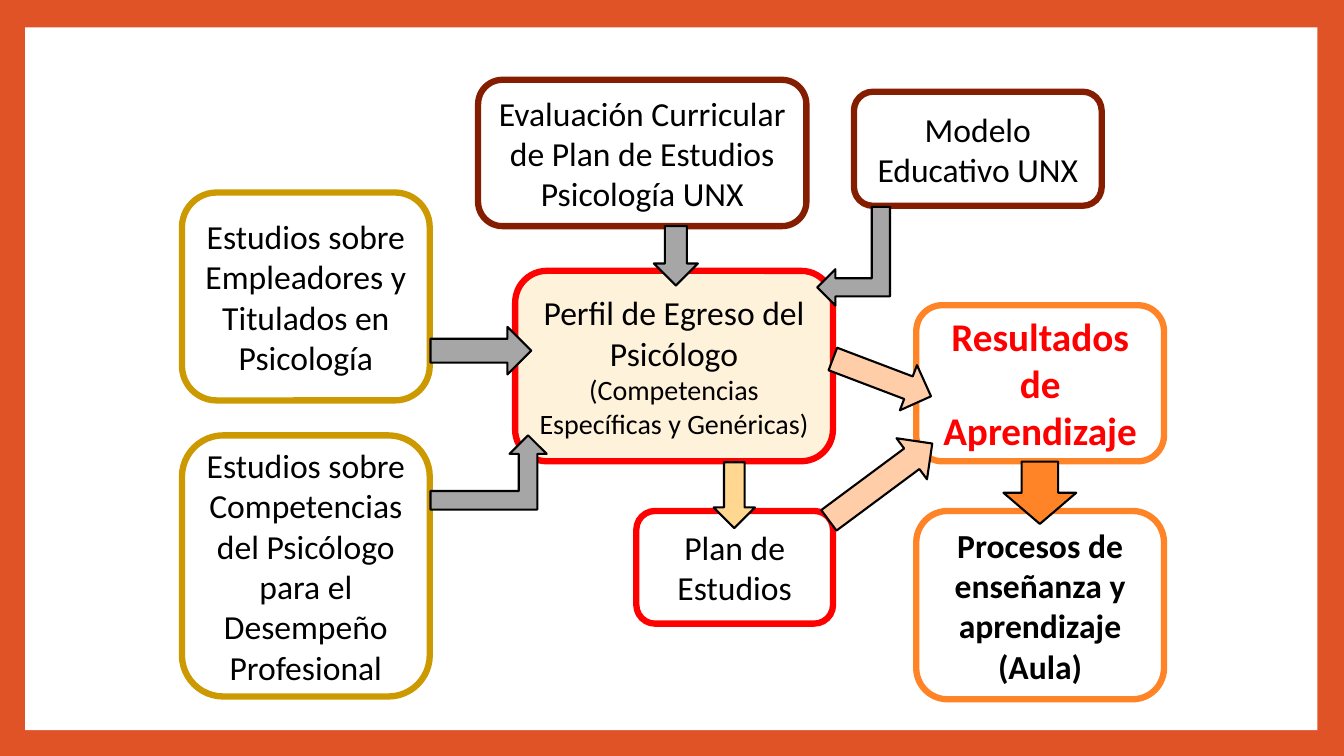
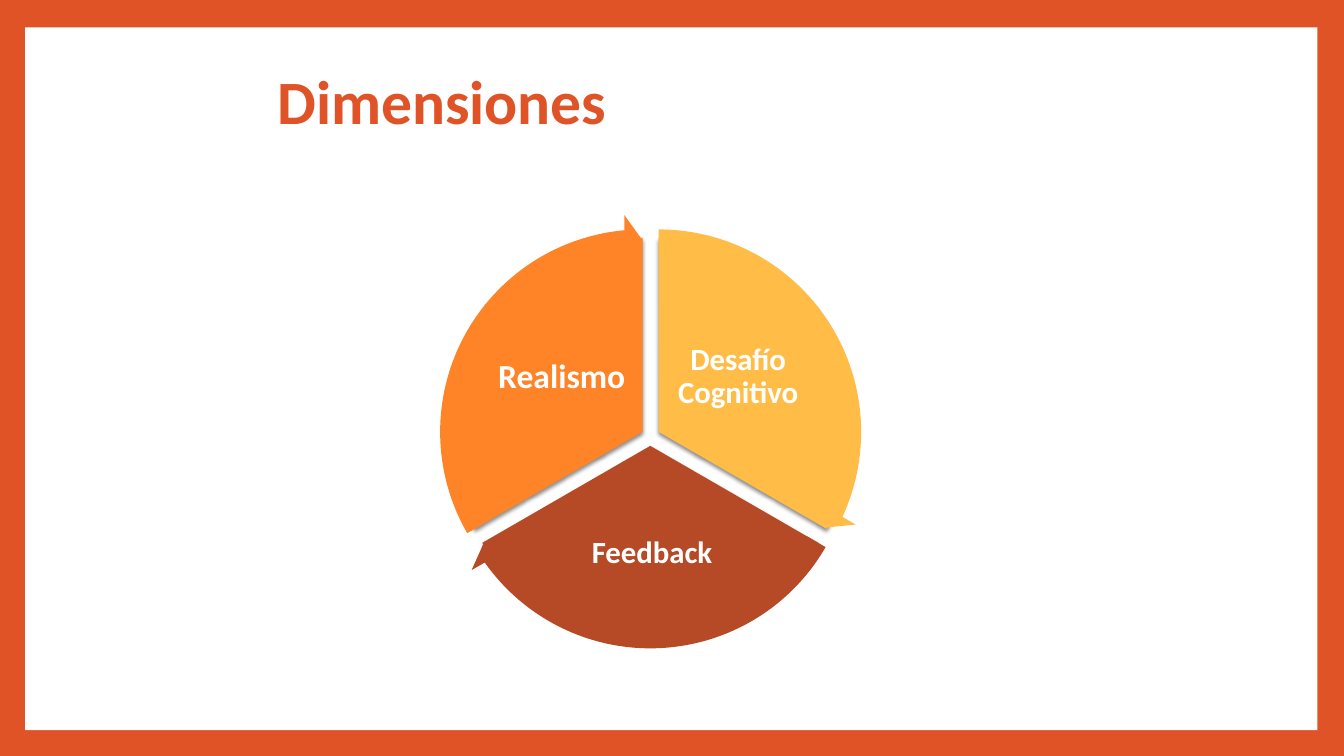
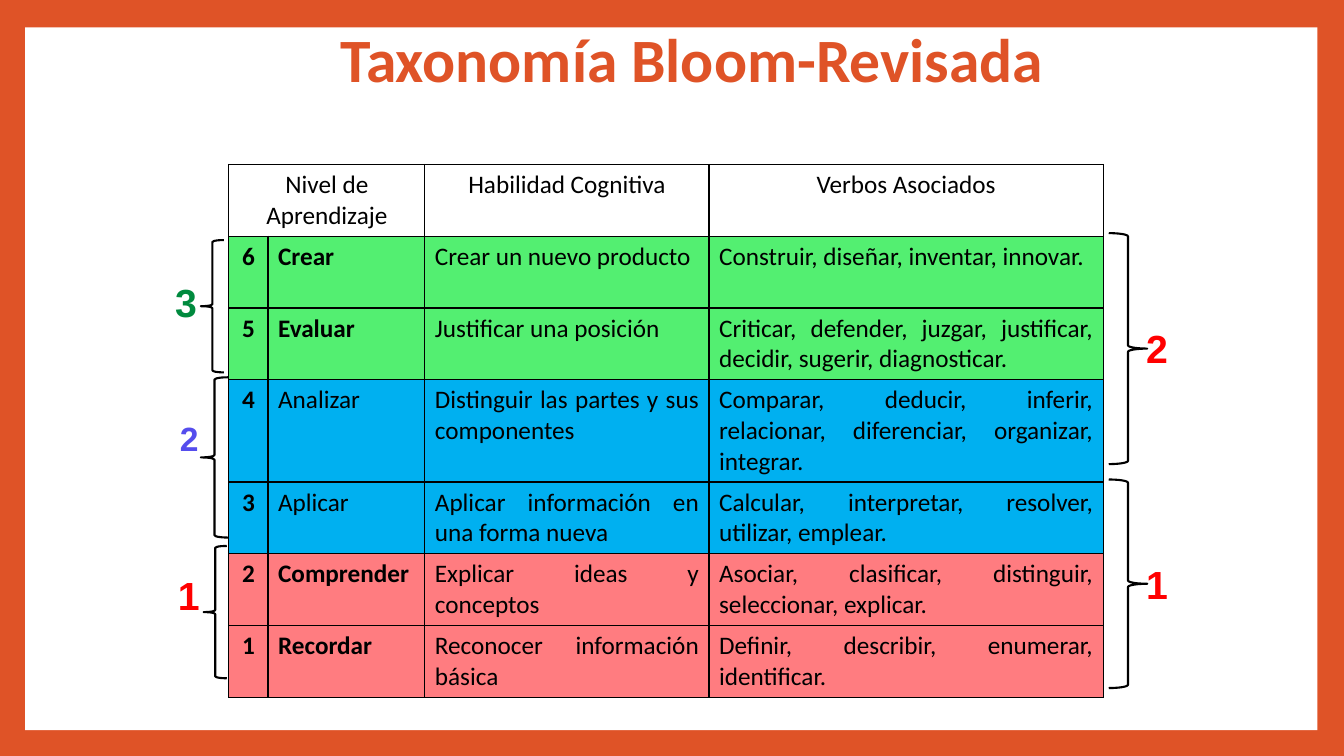
from dataclasses import dataclass

from lxml import etree
from pptx import Presentation
from pptx.dml.color import RGBColor
from pptx.enum.shapes import MSO_SHAPE
from pptx.enum.text import MSO_ANCHOR, PP_ALIGN
from pptx.oxml.ns import qn
from pptx.util import Pt

LEFT, CENTER, JUSTIFY = PP_ALIGN.LEFT, PP_ALIGN.CENTER, PP_ALIGN.JUSTIFY
TOP, MIDDLE = MSO_ANCHOR.TOP, MSO_ANCHOR.MIDDLE
RECTANGLE, ROUNDED = MSO_SHAPE.RECTANGLE, MSO_SHAPE.ROUNDED_RECTANGLE
RIGHT_ARROW, BENT_ARROW = MSO_SHAPE.RIGHT_ARROW, MSO_SHAPE.BENT_UP_ARROW
LEFT_BRACE, RIGHT_BRACE = MSO_SHAPE.LEFT_BRACE, MSO_SHAPE.RIGHT_BRACE
PIE, CIRCULAR_ARROW = MSO_SHAPE.PIE, MSO_SHAPE.CIRCULAR_ARROW


@dataclass(frozen=True)
class Theme:
    # Colours
    accent: str = "DF5327"
    white: str = "FFFFFF"
    black: str = "000000"
    red: str = "FF0000"
    gold: str = "CC9900"
    orange: str = "FF8427"
    maroon: str = "851D00"
    cream: str = "FFF2DA"
    gray: str = "A6A6A6"
    sand: str = "FFD791"
    peach: str = "FFCEA9"
    yellow: str = "FFBD47"
    brick: str = "B64926"
    green_row: str = "53EF71"
    blue_row: str = "00B0F0"
    pink_row: str = "FF7C80"
    green_label: str = "008A3E"
    violet_label: str = "554DED"
    # Fonts and sizes
    font: str = "Calibri"
    label_font: str = "Arial"
    title_size: int = 44
    large_size: int = 28
    box_size: int = 24
    sector_size: int = 22
    note_size: int = 20
    table_size: int = 18
    box_line: float = 4.5
    thin_line: float = 1.5
    cell_line: float = 1


THEME = Theme()


def apply_format(target, **values):
    for name, value in values.items():
        setattr(target, name, value)


class Deck:
    """Holds the style and the current slide."""

    def __init__(self, theme):
        self.theme = theme
        self.presentation = Presentation()
        apply_format(self.presentation, slide_width=Pt(960), slide_height=Pt(540))
        self.slide = None

    def new_slide(self):
        self.slide = self.presentation.slides.add_slide(
            self.presentation.slide_layouts[6])
        background = self.slide.background.fill
        background.solid()
        background.fore_color.rgb = RGBColor.from_string(self.theme.accent)
        self.shape(RECTANGLE, (18, 19.5, 923, 502), self.theme.white)

    def fill_text(self, frame, paragraphs, color=None, font=None, bold=False,
                  align=CENTER, anchor=MIDDLE, spacing=1.0, margins=None):
        """Fill a text frame with (text, size) paragraphs."""
        apply_format(frame, word_wrap=True, vertical_anchor=anchor)
        if margins is not None:
            for side in ("left", "right", "top", "bottom"):
                setattr(frame, f"margin_{side}", Pt(margins))
        for index, (text, size) in enumerate(paragraphs):
            paragraph = frame.add_paragraph() if index else frame.paragraphs[0]
            apply_format(paragraph, alignment=align, line_spacing=spacing)
            run = paragraph.add_run()
            run.text = text
            apply_format(run.font, name=font or self.theme.font,
                         size=Pt(size), bold=bold)
            run.font.color.rgb = RGBColor.from_string(color or self.theme.black)

    def text(self, place, text, size, **style):
        box = self.slide.shapes.add_textbox(*map(Pt, place))
        self.fill_text(box.text_frame, [(text, size)], **style)

    def title(self, place, text, align=LEFT):
        self.text(place, text, self.theme.title_size, color=self.theme.accent,
                  bold=True, align=align, spacing=0.9)

    def shape(self, kind, place, fill=None, line=None, width=0, rotation=0,
              adjustments=()):
        shape = self.slide.shapes.add_shape(kind, *map(Pt, place))
        shape.shadow.inherit = False
        shape.rotation = rotation
        for index, value in enumerate(adjustments):
            shape.adjustments[index] = value
        if fill:
            shape.fill.solid()
            shape.fill.fore_color.rgb = RGBColor.from_string(fill)
        else:
            shape.fill.background()
        if line:
            shape.line.color.rgb = RGBColor.from_string(line)
            shape.line.width = Pt(width)
        else:
            shape.line.fill.background()
        return shape

    def box(self, place, line, paragraphs, fill=None, **style):
        shape = self.shape(ROUNDED, place, fill or self.theme.white, line,
                           self.theme.box_line)
        self.fill_text(shape.text_frame, paragraphs, **style)

    def arrow(self, kind, place, fill, rotation=0, flip=False):
        shape = self.shape(kind, place, fill, self.theme.black,
                           self.theme.thin_line, rotation)
        if flip:
            shape._element.spPr.find(qn("a:xfrm")).set("flipV", "1")

    def brace(self, kind, place):
        self.shape(kind, place, None, self.theme.black, self.theme.thin_line)

    def sector(self, place, fill, start, end):
        shape = self.shape(PIE, place, fill, adjustments=(start, end))
        effects = shape._element.spPr.find(qn("a:effectLst"))
        shadow = etree.SubElement(effects, qn("a:outerShdw"), blurRad=str(Pt(3)),
                                  dist=str(Pt(2)), dir="5400000", rotWithShape="0")
        color = etree.SubElement(shadow, qn("a:srgbClr"), val=self.theme.black)
        etree.SubElement(color, qn("a:alpha"), val="45000")

    def cell(self, cell, text, fill, align, bold=False):
        properties = cell._tc.get_or_add_tcPr()
        for side in ("lnL", "lnR", "lnT", "lnB"):
            border = etree.SubElement(properties, qn(f"a:{side}"),
                                      w=str(Pt(self.theme.cell_line)))
            solid = etree.SubElement(border, qn("a:solidFill"))
            etree.SubElement(solid, qn("a:srgbClr"), val=self.theme.black)
        cell.fill.solid()
        cell.fill.fore_color.rgb = RGBColor.from_string(fill)
        if text:
            self.fill_text(cell.text_frame, [(text, self.theme.table_size)],
                           align=align, bold=bold, anchor=TOP)

    def table(self, left, top, widths, heights, header, rows):
        """Rows are (fill, bold level, texts); the header joins two columns."""
        table = self.slide.shapes.add_table(
            len(heights), len(widths), Pt(left), Pt(top),
            Pt(sum(widths)), Pt(sum(heights))).table
        for column, width in zip(table.columns, widths):
            column.width = Pt(width)
        for row, height in zip(table.rows, heights):
            row.height = Pt(height)
        for column, text in enumerate(header):
            self.cell(table.cell(0, column), text, self.theme.white, CENTER)
        table.cell(0, 0).merge(table.cell(0, 1))
        alignments = (CENTER, LEFT, JUSTIFY, JUSTIFY)
        for index, (fill, bold_level, texts) in enumerate(rows, 1):
            bolds = (True, bold_level, False, False)
            for column, text in enumerate(texts):
                self.cell(table.cell(index, column), text, fill,
                          alignments[column], bolds[column])


def build_profile(deck):
    theme = deck.theme
    size = theme.box_size
    deck.new_slide()
    # Sources, profile and plan
    plain_boxes = [
        ((130, 137.5, 177, 148.5), theme.gold,
         "Estudios sobre Empleadores y Titulados en Psicología"),
        ((130, 311, 177, 186.5), theme.gold,
         "Estudios sobre Competencias del Psicólogo para el Desempeño Profesional"),
        ((341.5, 57, 234.5, 104.5), theme.maroon,
         "Evaluación Curricular de Plan de Estudios Psicología UNX"),
        ((610, 65.5, 177, 81.5), theme.maroon, "Modelo Educativo UNX"),
        ((454.5, 365, 140.5, 80.5), theme.red, "Plan de Estudios"),
    ]
    for place, line, text in plain_boxes:
        deck.box(place, line, [(text, size)])
    deck.box((368, 193.5, 227, 136), theme.red,
             [("Perfil de Egreso del Psicólogo", size),
              ("(Competencias Específicas y Genéricas)", theme.note_size)],
             fill=theme.cream)
    # Results and classroom
    deck.box((654.5, 365, 177, 134.5), theme.orange,
             [("Procesos de enseñanza y aprendizaje", size), ("(Aula)", size)],
             bold=True)
    deck.box((654.5, 218, 177, 111.5), theme.orange,
             [("Resultados de Aprendizaje", theme.large_size)],
             color=theme.red, bold=True)
    # Arrows
    deck.arrow(BENT_ARROW, (307.5, 311, 83, 53), theme.gray)
    deck.arrow(BENT_ARROW, (574.5, 157, 70.5, 52), theme.gray, 90, flip=True)
    straight_arrows = [
        ((307.5, 233.5, 72, 34), theme.gray, 0),
        ((461.5, 167, 42.5, 31.5), theme.gray, 90),
        ((501, 339, 47, 29.5), theme.sand, 90),
        ((720.5, 326, 44.5, 52), theme.orange, 90),
        ((592.5, 252.5, 75, 34.5), theme.peach, 20.8),
        ((583, 326, 92, 36.5), theme.peach, 323.4),
    ]
    for place, fill, rotation in straight_arrows:
        deck.arrow(RIGHT_ARROW, place, fill, rotation)


def build_dimensions(deck):
    theme = deck.theme
    deck.new_slide()
    deck.title((191, 17.5, 606, 114.5), "Dimensiones")
    # Cycle: angles in adjustment units, where a full turn is 216
    turn, third, head = 216, 72, 3.28
    diameter, margin = 277, 17
    sectors = [
        (332, 170, theme.yellow, 162, "Desafío Cognitivo", theme.sector_size,
         (478, 228, 98.5, 83)),
        (326, 180, theme.brick, 18, "Feedback", theme.sector_size,
         (391.5, 359.5, 148.5, 72.5)),
        (320.5, 170, theme.orange, 90, "Realismo", theme.box_size,
         (352, 228, 98.5, 83)),
    ]
    for left, top, fill, start, text, size, place in sectors:
        deck.sector((left, top, diameter, diameter), fill, start,
                    (start + third) % turn)
        deck.text(place, text, size, color=theme.white, bold=True, spacing=0.9,
                  margins=2)
    for left, top, fill, start, *_ in sectors:
        end = (start + third) % turn
        outer = diameter + 2 * margin
        deck.shape(CIRCULAR_ARROW, (left - margin, top - margin, outer, outer),
                   fill, adjustments=(0.05, head, end - head, start, 0.06))


def build_taxonomy(deck):
    theme = deck.theme
    deck.new_slide()
    deck.title((196.5, 0, 596, 90), "Taxonomía Bloom-Revisada", CENTER)
    # Levels table
    green, blue, pink = theme.green_row, theme.blue_row, theme.pink_row
    two_lines, three_lines = 51.3, 73
    rows = [
        (green, True, ("6", "Crear", "Crear un nuevo producto",
                       "Construir, diseñar, inventar, innovar.")),
        (green, True, ("5", "Evaluar", "Justificar una posición",
                       "Criticar, defender, juzgar, justificar, decidir, "
                       "sugerir, diagnosticar.")),
        (blue, False, ("4", "Analizar", "Distinguir las partes y sus componentes",
                       "Comparar, deducir, inferir, relacionar, diferenciar, "
                       "organizar, integrar.")),
        (blue, False, ("3", "Aplicar", "Aplicar información en una forma nueva",
                       "Calcular, interpretar, resolver, utilizar, emplear.")),
        (pink, True, ("2", "Comprender", "Explicar ideas y conceptos",
                      "Asociar, clasificar, distinguir, seleccionar, explicar.")),
        (pink, True, ("1", "Recordar", "Reconocer información básica",
                      "Definir, describir, enumerar, identificar.")),
    ]
    deck.table(163.5, 117.5, (28, 112, 203, 281.5),
               [two_lines] * 3 + [three_lines] + [two_lines] * 3,
               ("Nivel de Aprendizaje", "", "Habilidad Cognitiva",
                "Verbos Asociados"), rows)
    # Group braces and their numbers
    braces = [
        (LEFT_BRACE, (143.5, 171.5, 16.5, 94.5)),
        (LEFT_BRACE, (143.5, 269.5, 19.5, 114.5)),
        (LEFT_BRACE, (145.5, 390, 16.5, 94.5)),
        (RIGHT_BRACE, (792, 166.5, 27.5, 165)),
        (RIGHT_BRACE, (792, 342.5, 27.5, 149)),
    ]
    for kind, place in braces:
        deck.brace(kind, place)
    numbers = [
        ((118, 195, 32, 41), "3", theme.large_size, theme.green_label),
        ((121.5, 295, 30, 36), "2", theme.box_size, theme.violet_label),
        ((120, 404.5, 32, 41), "1", theme.large_size, theme.red),
        ((811.5, 396.5, 32, 41), "1", theme.large_size, theme.red),
        ((811.5, 228, 32, 41), "2", theme.large_size, theme.red),
    ]
    for place, text, size, color in numbers:
        deck.text(place, text, size, color=color, font=theme.label_font,
                  bold=True, align=LEFT, anchor=TOP)


def main():
    deck = Deck(THEME)
    build_profile(deck)
    build_dimensions(deck)
    build_taxonomy(deck)
    deck.presentation.save("out.pptx")


if __name__ == "__main__":
    main()
